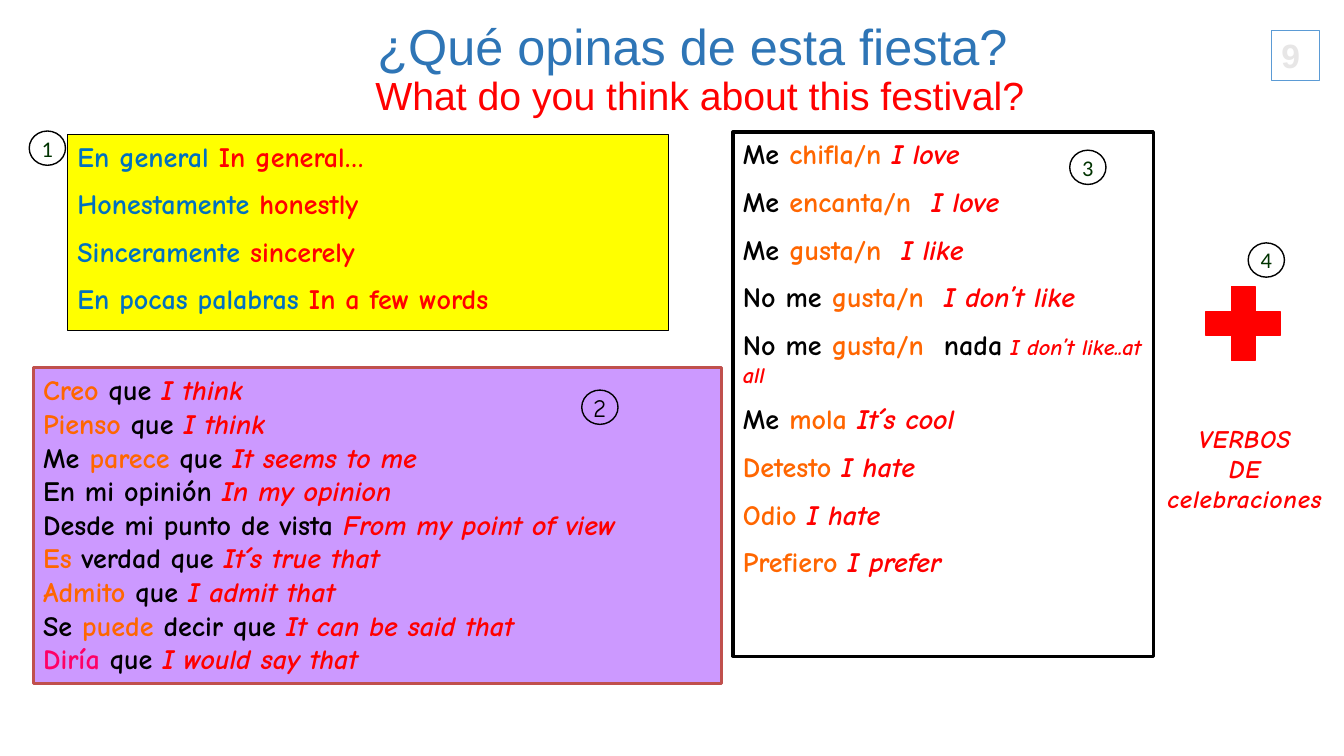
from dataclasses import dataclass

from pptx import Presentation
from pptx.dml.color import RGBColor
from pptx.enum.shapes import MSO_SHAPE as Shape
from pptx.enum.text import MSO_ANCHOR as Anchor, MSO_AUTO_SIZE as AutoSize, PP_ALIGN as Align
from pptx.util import Inches, Pt


@dataclass(frozen=True)
class Theme:
    hand: str = "Comic Neue"
    heading: str = "Arial"
    number: str = "Calibri"
    black: str = "000000"
    red: str = "FF0000"
    orange: str = "FF6600"
    pink: str = "FF0066"
    blue: str = "0070C0"
    title_blue: str = "2E75B6"
    green: str = "003300"
    yellow: str = "FFFF00"
    purple: str = "CC99FF"
    brick: str = "C0504D"
    frame_blue: str = "5B9BD5"
    pale: str = "E7E6E6"
    title_size: float = 36
    subtitle_size: float = 28
    page_size: float = 24
    phrase_size: float = 20
    label_size: float = 18
    small_size: float = 16


THEME = Theme()

# Each kind of phrase part: colour, size, italic
PARTS = {
    "plain": (THEME.black, THEME.phrase_size, False),
    "verb": (THEME.orange, THEME.phrase_size, False),
    "conditional": (THEME.pink, THEME.phrase_size, False),
    "opener": (THEME.blue, THEME.phrase_size, False),
    "meaning": (THEME.red, THEME.phrase_size, False),
    "english": (THEME.red, THEME.phrase_size, True),
    "small": (THEME.red, THEME.small_size, True),
}

OPENERS = [
    [("opener", spanish), ("meaning", english)]
    for spanish, english in [
        ("En general ", "In general…"),
        ("Honestamente ", "honestly"),
        ("Sinceramente ", "sincerely"),
        ("En pocas palabras ", "In a few words"),
    ]
]

OPINIONS = [
    [("verb", "Creo"), ("plain", " que "), ("english", "I think")],
    [("verb", "Pienso"), ("plain", " que "), ("english", "I think")],
    [("plain", "Me "), ("verb", "parece"), ("plain", " que "), ("english", "It seems to me")],
    [("plain", "En mi opinión "), ("english", "In my opinion")],
    [("plain", "Desde mi punto de vista "), ("english", "From my point of view")],
    [("verb", "Es"), ("plain", " verdad que "), ("english", "It´s true that")],
    [("verb", "Admito"), ("plain", " que "), ("english", "I admit that")],
    [("plain", "Se "), ("verb", "puede"), ("plain", " decir que "),
     ("english", "It can be said that")],
    [("conditional", "Diría"), ("plain", " que "), ("english", "I would say that")],
]

LIKES = [
    [("plain", "Me "), ("verb", "chifla/n "), ("english", "I love")],
    [("plain", "Me "), ("verb", "encanta/n  "), ("english", "I love")],
    [("plain", "Me "), ("verb", "gusta/n  "), ("english", "I like")],
    [("plain", "No me "), ("verb", "gusta/n  "), ("english", "I don’t like")],
    [("plain", "No me "), ("verb", "gusta/n  "), ("plain", "nada"),
     ("small", " I don’t like..at all")],
    [("plain", "Me "), ("verb", "mola "), ("english", "It´s cool")],
    [("verb", "Detesto "), ("english", "I hate")],
    [("verb", "Odio "), ("english", "I hate")],
    [("verb", "Prefiero "), ("english", "I prefer")],
]


class FestivalSlide:
    def __init__(self, presentation, theme):
        self.theme = theme
        self.slide = presentation.slides.add_slide(presentation.slide_layouts[5])

    def style(self, run, font, size, color, bold=False, italic=False):
        run.font.name = font
        run.font.size = Pt(size)
        run.font.color.rgb = RGBColor.from_string(color)
        run.font.bold = bold
        run.font.italic = italic

    def title(self, spanish, english, box):
        title = self.slide.shapes.title
        title.left, title.top, title.width, title.height = map(Inches, box)
        frame = title.text_frame
        frame.vertical_anchor = Anchor.BOTTOM
        frame.auto_size = AutoSize.NONE
        paragraph = frame.paragraphs[0]
        paragraph.text = f"{spanish} \v{english}"
        paragraph.alignment = Align.CENTER
        paragraph.line_spacing = 0.9
        top, bottom = paragraph.runs
        theme = self.theme
        self.style(top, theme.heading, theme.title_size, theme.title_blue)
        self.style(bottom, theme.heading, theme.subtitle_size, theme.red)

    def shape(self, kind, box, line, width=1, fill=None):
        shape = self.slide.shapes.add_shape(kind, *map(Inches, box))
        shape.shadow.inherit = False
        if fill:
            shape.fill.solid()
            shape.fill.fore_color.rgb = RGBColor.from_string(fill)
        else:
            shape.fill.background()
        shape.line.color.rgb = RGBColor.from_string(line)
        shape.line.width = Pt(width)
        return shape

    def panel(self, phrases, box, line, width, fill=None, gap=0):
        """Frame a list of phrases, each made of (part, text) pairs."""
        frame = self.shape(Shape.RECTANGLE, box, line, width, fill).text_frame
        frame.word_wrap = True
        frame.vertical_anchor = Anchor.TOP
        for index, phrase in enumerate(phrases):
            paragraph = frame.add_paragraph() if index else frame.paragraphs[0]
            paragraph.alignment = Align.LEFT
            paragraph.space_before = Pt(gap if index else 0)
            for part, text in phrase:
                run = paragraph.add_run()
                run.text = text
                color, size, italic = PARTS[part]
                self.style(run, self.theme.hand, size, color, True, italic)

    def badge(self, number, left, top, font, size, color):
        shape = self.shape(Shape.OVAL, (left, top, 0.36, 0.34), self.theme.black)
        frame = shape.text_frame
        frame.word_wrap = False
        frame.vertical_anchor = Anchor.MIDDLE
        frame.text = number
        frame.paragraphs[0].alignment = Align.CENTER
        self.style(frame.paragraphs[0].runs[0], font, size, color)

    def page_number(self, number, box):
        theme = self.theme
        frame = self.shape(Shape.RECTANGLE, box, theme.frame_blue, 0.75).text_frame
        frame.text = number
        frame.vertical_anchor = Anchor.MIDDLE
        frame.paragraphs[0].alignment = Align.LEFT
        self.style(frame.paragraphs[0].runs[0], theme.heading, theme.page_size, theme.pale, True)

    def label(self, text, box):
        frame = self.slide.shapes.add_textbox(*map(Inches, box)).text_frame
        frame.word_wrap = True
        frame.text = text
        theme = self.theme
        for paragraph in frame.paragraphs:
            paragraph.alignment = Align.CENTER
            run = paragraph.runs[0]
            self.style(run, theme.hand, theme.label_size, theme.red, True, True)
            run.font._element.set("spc", "50")


def main():
    presentation = Presentation()
    presentation.slide_width, presentation.slide_height = Inches(13.33), Inches(7.5)
    theme = THEME
    slide = FestivalSlide(presentation, theme)

    slide.title("¿Qué opinas de esta fiesta?", "What do you think about this festival?",
                (2.44, 0.28, 9, 0.95))
    slide.panel(LIKES, (7.27, 1.31, 4.17, 5.2), theme.black, 2.25, gap=10)
    slide.panel(OPINIONS, (0.33, 3.65, 6.83, 3.13), theme.brick, 2, theme.purple)
    slide.panel(OPENERS, (0.67, 1.33, 5.96, 1.95), theme.black, 0.75, theme.yellow, gap=10)
    slide.shape(Shape.MATH_PLUS, (11.83, 2.71, 1, 1), theme.red, fill=theme.red)

    for number, left, top in [("1", 0.29, 1.3), ("3", 10.61, 1.49), ("4", 12.38, 2.41)]:
        slide.badge(number, left, top, theme.number, theme.small_size, theme.green)
    slide.badge("2", 5.77, 3.87, theme.hand, theme.label_size, theme.black)

    slide.page_number("9", (12.61, 0.3, 0.48, 0.5))
    slide.label("VERBOS\nDE\ncelebraciones", (11.36, 4.15, 1.97, 1.01))
    presentation.save("out.pptx")


if __name__ == "__main__":
    main()
